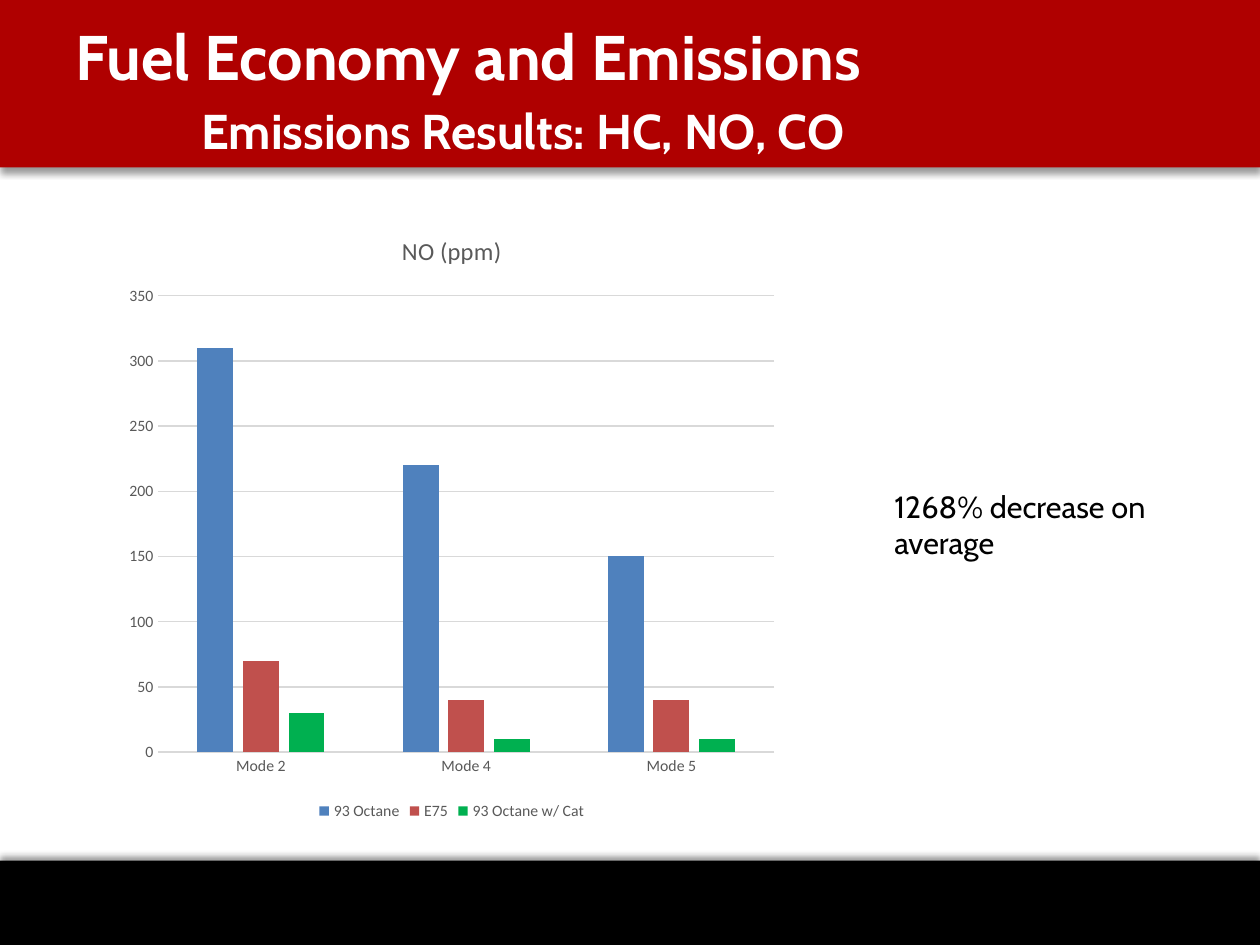
from lxml import etree
from pptx import Presentation
from pptx.chart.data import CategoryChartData
from pptx.dml.color import RGBColor
from pptx.enum.chart import XL_CHART_TYPE, XL_LEGEND_POSITION, XL_TICK_MARK
from pptx.enum.shapes import MSO_SHAPE
from pptx.enum.text import MSO_ANCHOR, PP_ALIGN
from pptx.oxml.ns import qn
from pptx.util import Inches, Pt

COLUMNS = XL_CHART_TYPE.COLUMN_CLUSTERED
BOTTOM = XL_LEGEND_POSITION.BOTTOM
NO_TICK = XL_TICK_MARK.NONE
RECTANGLE = MSO_SHAPE.RECTANGLE
MIDDLE = MSO_ANCHOR.MIDDLE
LEFT = PP_ALIGN.LEFT

GREY = "595959"
PALE = "D9D9D9"


def color(value):
    return RGBColor.from_string(value)


def style_font(font, name, size, value, bold=False):
    font.name = name
    font.size = Pt(size)
    font.color.rgb = color(value)
    font.bold = bold


def style_line(line, value):
    line.color.rgb = color(value)
    line.width = Pt(0.75)


class SlideBuilder:
    text_font = "Cabin"
    chart_font = "Calibri"

    def __init__(self, page):
        self.page = page

    def band(self, top, height, fill, direction):
        shape = self.page.shapes.add_shape(
            RECTANGLE, 0, Inches(top), Inches(10), Inches(height))
        shape.fill.solid()
        shape.fill.fore_color.rgb = color(fill)
        shape.line.fill.background()
        shape.shadow.inherit = False
        effects = shape.element.spPr.find(qn("a:effectLst"))
        shadow = etree.SubElement(
            effects, qn("a:outerShdw"), blurRad=str(Pt(4)), dist=str(Pt(3)),
            dir=str(direction * 60000), rotWithShape="0")
        black = etree.SubElement(shadow, qn("a:srgbClr"), val="000000")
        etree.SubElement(black, qn("a:alpha"), val="40000")

    def title(self, heading, subheading):
        box = self.page.shapes.title
        box.left, box.top = Inches(0.5), Inches(0.17)
        box.width, box.height = Inches(8.25), Inches(1.08)
        self.page.shapes._spTree.append(box.element)
        frame = box.text_frame
        frame.word_wrap = True
        frame.vertical_anchor = MIDDLE
        para = frame.paragraphs[0]
        para.alignment = LEFT
        tabs = etree.SubElement(para._p.get_or_add_pPr(), qn("a:tabLst"))
        etree.SubElement(tabs, qn("a:tab"), pos=str(Inches(1)), algn="l")
        style_font(para.font, self.text_font, 36, "FFFFFF", True)
        para.add_run().text = heading
        para.add_line_break()
        for text, size in (("\t", 32.4), (subheading, 27.9)):
            span = para.add_run()
            span.text = text
            span.font.size = Pt(size)

    def note(self, text, left, top, width, height):
        box = self.page.shapes.add_textbox(
            Inches(left), Inches(top), Inches(width), Inches(height))
        box.text_frame.word_wrap = True
        para = box.text_frame.paragraphs[0]
        para.text = text
        style_font(para.font, self.text_font, 17.5, "000000")

    def column_chart(self, title, categories, series, left, top, width, height):
        data = CategoryChartData()
        data.categories = categories
        for name, values, _ in series:
            data.add_series(name, values)
        chart = self.page.shapes.add_chart(
            COLUMNS, Inches(left), Inches(top), Inches(width), Inches(height),
            data).chart
        style_font(chart.font, self.chart_font, 10, "000000")

        chart.has_title = True
        para = chart.chart_title.text_frame.paragraphs[0]
        para.text = title
        style_font(para.font, self.chart_font, 14, GREY)
        chart.chart_title.include_in_layout = False

        chart.has_legend = True
        chart.legend.position = BOTTOM
        chart.legend.include_in_layout = False
        style_font(chart.legend.font, self.chart_font, 9, GREY)

        for axis in (chart.category_axis, chart.value_axis):
            axis.major_tick_mark = axis.minor_tick_mark = NO_TICK
            style_font(axis.tick_labels.font, self.chart_font, 9, GREY)
        style_line(chart.category_axis.format.line, PALE)
        value_axis = chart.value_axis
        value_axis.format.line.fill.background()
        value_axis.minimum_scale, value_axis.maximum_scale = 0, 350
        value_axis.major_unit = 50
        value_axis.has_major_gridlines = True
        style_line(value_axis.major_gridlines.format.line, PALE)

        plot = chart.plots[0]
        plot.gap_width, plot.overlap = 219, -27
        plot.vary_by_categories = False
        for columns, (_, _, fill) in zip(plot.series, series):
            columns.format.fill.solid()
            columns.format.fill.fore_color.rgb = color(fill)


def main():
    deck = Presentation()
    deck.slide_width, deck.slide_height = Inches(10), Inches(7.5)
    builder = SlideBuilder(deck.slides.add_slide(deck.slide_layouts[5]))
    builder.band(6.83, 0.67, "000000", 270)
    builder.band(0, 1.33, "AF0000", 90)
    builder.note("1268% decrease on average", 7, 3.82, 2.83, 0.58)
    builder.title("Fuel Economy and Emissions", "Emissions Results: HC, NO, CO")
    builder.column_chart(
        "NO (ppm)",
        ["Mode 2", "Mode 4", "Mode 5"],
        [("93 Octane", (310, 220, 150), "4F81BD"),
         ("E75", (70, 40, 40), "C0504D"),
         ("93 Octane w/ Cat", (30, 10, 10), "00B050")],
        0.92, 1.67, 5.33, 4.88)
    deck.save("out.pptx")


if __name__ == "__main__":
    main()
